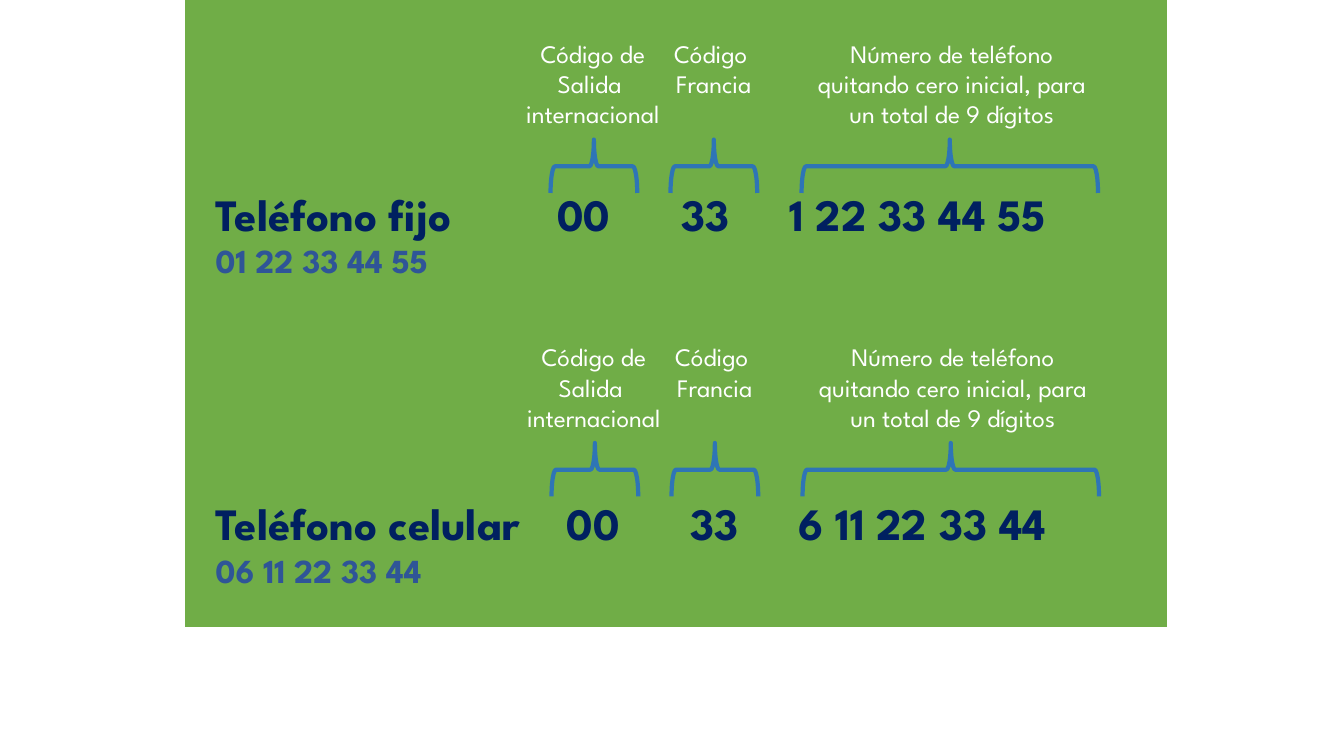
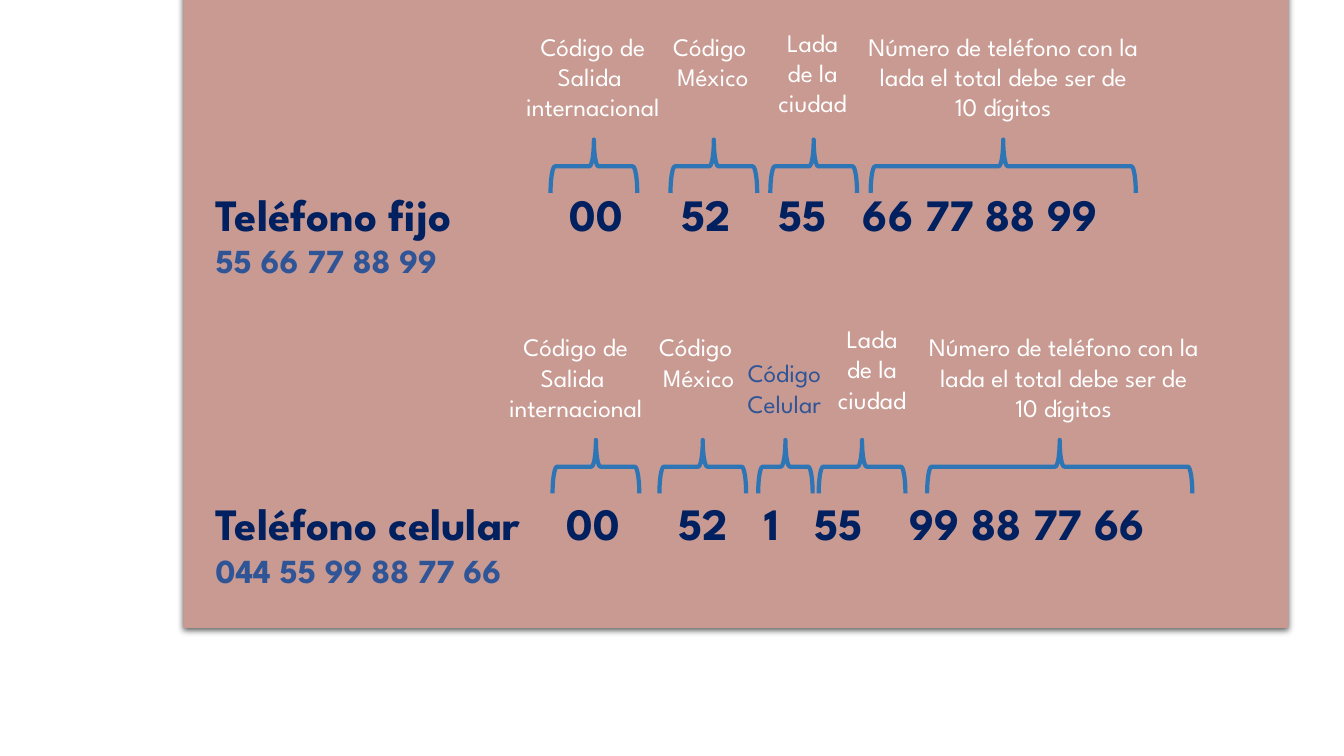
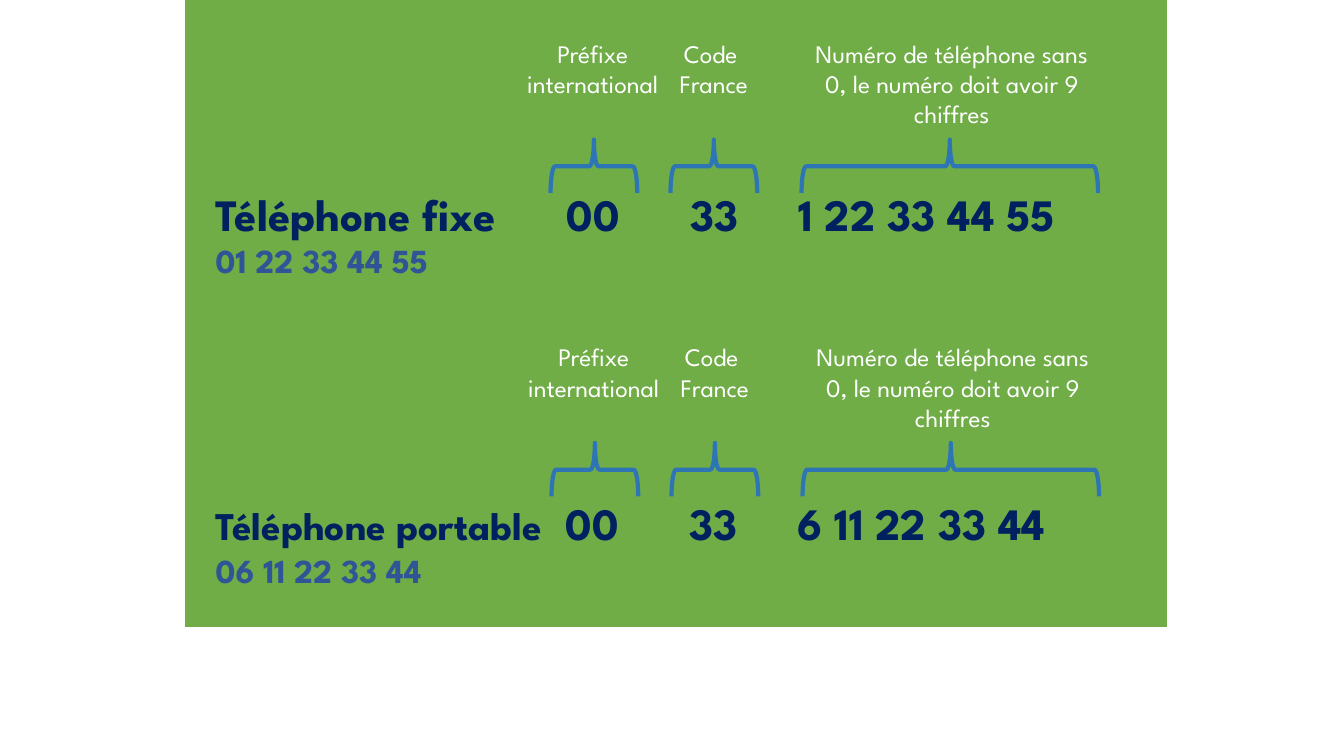
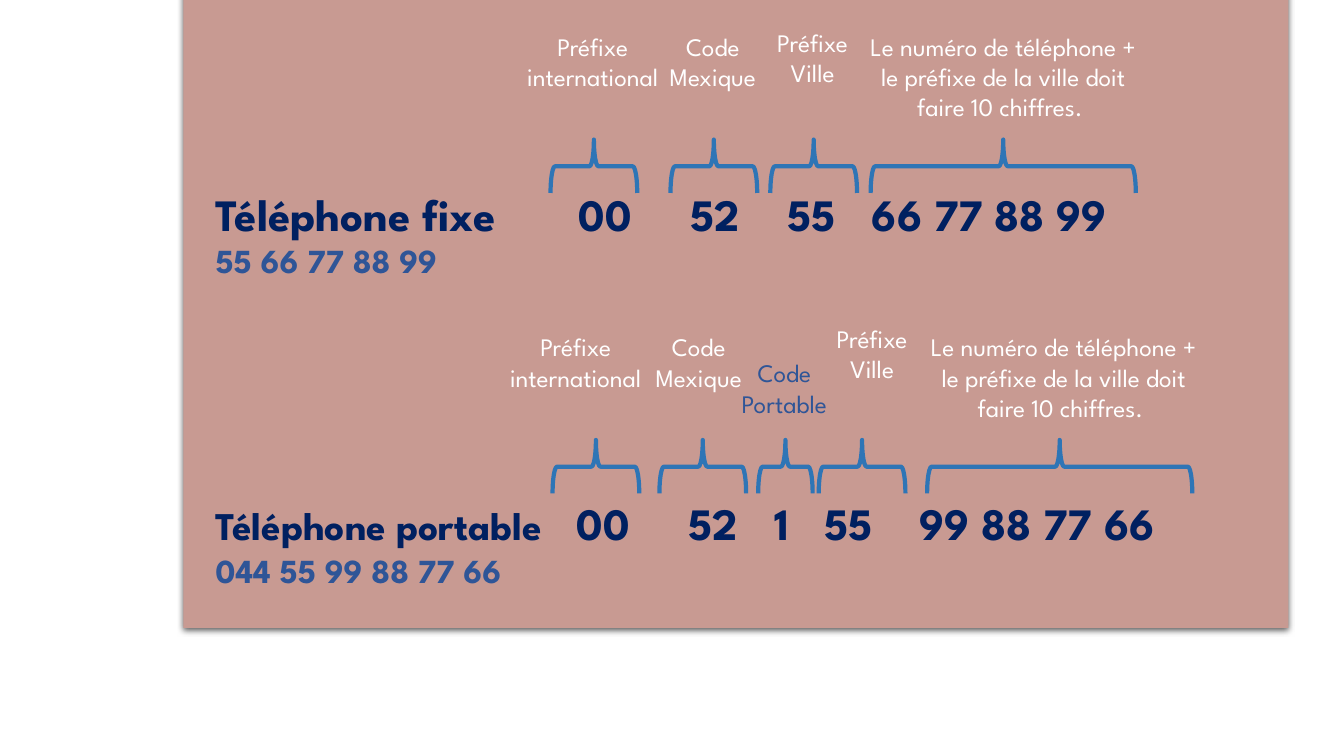
"""Builds four slides on dialling France and Mexico, in Spanish and in French."""
from pptx import Presentation
from pptx.dml.color import RGBColor
from pptx.enum.shapes import MSO_SHAPE
from pptx.enum.text import PP_ALIGN
from pptx.oxml import parse_xml
from pptx.oxml.ns import nsdecls
from pptx.util import Inches, Pt
from lxml import etree

RECT, BRACE = MSO_SHAPE.RECTANGLE, MSO_SHAPE.LEFT_BRACE
CENTER = PP_ALIGN.CENTER
FONT, WHITE, NAVY, BLUE, BRACE_BLUE = "League Spartan", "FFFFFF", "002060", "2F5597", "2E75B6"
TEXT_LEFT, BRACE_DEPTH = 2.04, 0.53
TAB_ORIGIN = TEXT_LEFT + 0.08
ROW_TOPS = (1.8, 4.87)

LABEL = {"size": Pt(18), "name": FONT}
NUMBER = {"size": Pt(32), "name": FONT, "bold": True}
LOCAL = {**NUMBER, "size": Pt(24)}
LONG_NAME = {**NUMBER, "size": Pt(28)}

SHADOW = (
    f'<a:effectLst {nsdecls("a")}><a:outerShdw blurRad="57150" dist="19050" dir="5400000" '
    'algn="ctr" rotWithShape="0"><a:srgbClr val="000000"><a:alpha val="63000"/></a:srgbClr>'
    '</a:outerShdw></a:effectLst>'
)


def rgb(value):
    return RGBColor.from_string(value)


def add_run(p, text, font, color):
    r = p.add_run()
    r.text = text
    for key, value in font.items():
        setattr(r.font, key, value)
    r.font.color.rgb = rgb(color)


# Column: tab, brace centre, brace span, label centre, label top, label width, label colour
FRANCE_FIRST = [
    (5.51, 5.89, 0.86, 5.88, 0.33, 1.57, WHITE),
    (6.74, 7.08, 0.86, 7.08, 0.33, 1.07, WHITE),
    (7.81, 9.42, 2.94, 9.44, 0.33, 2.92, WHITE),
]
FRANCE_SECOND = [
    (tab + 0.09, brace + 0.01, span, label + 0.01, top + 3.01, width, color)
    for tab, brace, span, label, top, width, color in FRANCE_FIRST
]
MEXICO_FIRST = [
    (5.63, 5.89, 0.86, 5.88, 0.26, 1.57, WHITE),
    (6.74, 7.08, 0.86, 7.07, 0.26, 1.09, WHITE),
    (7.7, 8.07, 0.86, 8.06, 0.22, 0.97, WHITE),
    (8.54, 9.95, 2.63, 9.95, 0.26, 2.92, WHITE),
]
MEXICO_SECOND = [
    (5.6, 5.91, 0.86, 5.71, 3.24, 1.57, WHITE),
    (6.71, 6.97, 0.86, 6.93, 3.24, 1.09, WHITE),
    (7.56, 7.79, 0.54, 7.78, 3.5, 1.13, BLUE),
    (8.06, 8.55, 0.86, 8.65, 3.16, 0.97, WHITE),
    (9.0, 10.51, 2.63, 10.55, 3.24, 2.92, WHITE),
]

COUNTRIES = {
    "France": {
        "width": 9.77, "fill": "70AD47", "shadow": False, "brace_y": (1.65, 4.66),
        "columns": (FRANCE_FIRST, FRANCE_SECOND),
        "local": ("01 22 33 44 55", "06 11 22 33 44"),
        "numbers": (["00", "33", "1 22 33 44 55"], ["00", "33", "6 11 22 33 44"]),
    },
    "Mexico": {
        "width": 10.96, "fill": "C89A92", "shadow": True, "brace_y": (1.65, 4.63),
        "columns": (MEXICO_FIRST, MEXICO_SECOND),
        "local": ("55 66 77 88 99", "044 55 99 88 77 66"),
        "numbers": (["00", "52", "55", "66 77 88 99"], ["00", "52", "1", "55", "99 88 77 66"]),
    },
}

SPANISH = [("Teléfono fijo", NUMBER), ("Teléfono celular", NUMBER)]
FRENCH = [("Téléphone fixe", NUMBER), ("Téléphone portable", LONG_NAME)]
EXIT_ES = "Código de\nSalida \ninternacional"
EXIT_FR = "Préfixe\ninternational"
FRANCE_ES = [EXIT_ES, "Código \nFrancia",
             "Número de teléfono quitando cero inicial, para un total de 9 dígitos"]
FRANCE_FR = [EXIT_FR, "Code \nFrance",
             "Numéro de téléphone sans 0, le numéro doit avoir 9 chiffres"]
MEXICO_ES = [EXIT_ES, "Código \nMéxico", "Lada de la ciudad",
             "Número de teléfono con la lada el total debe ser de 10 dígitos"]
MEXICO_FR = [EXIT_FR, "Code\nMexique", "Préfixe\nVille",
             "Le numéro de téléphone + le préfixe de la ville doit faire 10 chiffres. "]

SLIDES = [
    ("France", SPANISH, (FRANCE_ES, FRANCE_ES), (0, 0)),
    ("Mexico", SPANISH, (MEXICO_ES, MEXICO_ES[:2] + ["Código Celular"] + MEXICO_ES[2:]), (0, 0)),
    ("France", FRENCH, (FRANCE_FR, FRANCE_FR), (0.09, -0.01)),
    ("Mexico", FRENCH, (MEXICO_FR, MEXICO_FR[:2] + ["Code\nPortable"] + MEXICO_FR[2:]), (0.09, 0.1)),
]

prs = Presentation()
prs.slide_width, prs.slide_height = Inches(13.33), Inches(7.5)

for country, names, labels, shifts in SLIDES:
    layout = COUNTRIES[country]
    s = prs.slides.add_slide(prs.slide_layouts[6])
    panel = s.shapes.add_shape(RECT, Inches(1.82), Inches(-0.16), Inches(layout["width"]), Inches(6.39))
    panel.fill.solid()
    panel.fill.fore_color.rgb = rgb(layout["fill"])
    if layout["shadow"]:
        panel.line.fill.background()
        panel._element.spPr.append(parse_xml(SHADOW))
    else:
        panel.line.color.rgb = rgb(WHITE)
        panel.line.width = Pt(1.5)
        panel.shadow.inherit = False

    for row, (name, name_font) in enumerate(names):
        columns, numbers = layout["columns"][row], layout["numbers"][row]
        tf = s.shapes.add_textbox(
            Inches(TEXT_LEFT), Inches(ROW_TOPS[row]), Inches(10.4), Inches(1.07)).text_frame
        tf.word_wrap = True
        p = tf.paragraphs[0]
        add_run(p, name, name_font, NAVY)
        add_run(p, "\t" + "\t".join(numbers), NUMBER, NAVY)
        tabs = etree.SubElement(p._p.get_or_add_pPr(), p._p.tag[:-1] + "tabLst")
        for column in columns:
            position = Inches(column[0] + shifts[row] - TAB_ORIGIN)
            etree.SubElement(tabs, p._p.tag[:-1] + "tab", pos=str(position), algn="l")
        add_run(tf.add_paragraph(), layout["local"][row], LOCAL, BLUE)

        for (_, brace_x, span, label_x, top, width, color), label in zip(columns, labels[row]):
            sp = s.shapes.add_shape(
                BRACE, Inches(brace_x - BRACE_DEPTH / 2), Inches(layout["brace_y"][row] - span / 2),
                Inches(BRACE_DEPTH), Inches(span))
            sp.rotation = 90
            sp.fill.background()
            sp.line.color.rgb = rgb(BRACE_BLUE)
            sp.line.width = Pt(3)
            sp.shadow.inherit = False

            tf = s.shapes.add_textbox(
                Inches(label_x - width / 2), Inches(top), Inches(width), Inches(1.01)).text_frame
            tf.word_wrap = True
            for i, line in enumerate(label.split("\n")):
                p = tf.add_paragraph() if i else tf.paragraphs[0]
                p.alignment = CENTER
                add_run(p, line, LABEL, color)

prs.save("out.pptx")
